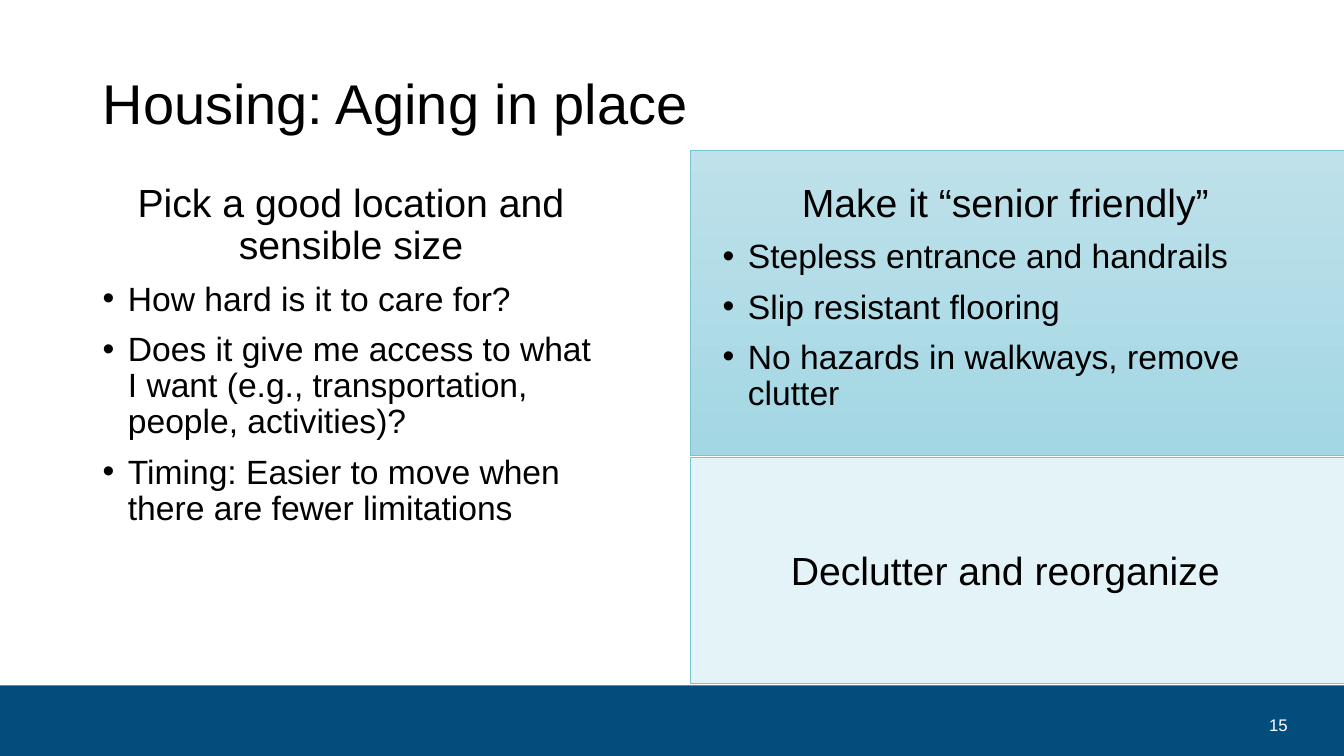
from lxml import etree
from pptx import Presentation
from pptx.dml.color import RGBColor
from pptx.enum import shapes, text
from pptx.oxml import ns
from pptx.util import Inches, Pt

BLACK = RGBColor(0x00, 0x00, 0x00)
WHITE = RGBColor(0xFF, 0xFF, 0xFF)
NAVY = RGBColor(0x02, 0x4D, 0x7C)
TEAL_LINE = RGBColor(0x77, 0xC4, 0xD5)
TEAL_PALE = RGBColor(0xE4, 0xF3, 0xF7)
TEAL_TOP = RGBColor(0xBE, 0xE1, 0xEA)
TEAL_BOTTOM = RGBColor(0xA3, 0xD7, 0xE4)

MIDDLE = text.MSO_ANCHOR.MIDDLE
CENTER = text.PP_ALIGN.CENTER
RIGHT = text.PP_ALIGN.RIGHT


class SlideBuilder:
    font = "Arial"
    heading_size = 28
    bullet_size = 24
    line_spacing = 0.9

    def __init__(self, slide):
        self.s = slide

    def panel(self, left, top, width, height, *colors, line=None):
        sp = self.s.shapes.add_shape(
            shapes.MSO_SHAPE.RECTANGLE,
            Inches(left), Inches(top), Inches(width), Inches(height))
        sp.shadow.inherit = False
        if len(colors) == 1:
            sp.fill.solid()
            sp.fill.fore_color.rgb = colors[0]
        else:
            sp.fill.gradient()
            sp.fill.gradient_angle = 270
            for stop, color in zip(sp.fill.gradient_stops, colors):
                stop.color.rgb = color
        if line is None:
            sp.line.fill.background()
        else:
            sp.line.color.rgb = line
            sp.line.width = Pt(0.5)

    def textbox(self, left, top, width, height, anchor=text.MSO_ANCHOR.TOP):
        sp = self.s.shapes.add_textbox(
            Inches(left), Inches(top), Inches(width), Inches(height))
        tf = sp.text_frame
        tf.word_wrap = True
        tf.vertical_anchor = anchor
        return tf

    def style(self, p, size, color=BLACK, align=None):
        p.line_spacing = self.line_spacing
        p.alignment = align
        for r in p.runs:
            r.font.name = self.font
            r.font.size = Pt(size)
            r.font.color.rgb = color

    def label(self, box, words, size, color=BLACK, align=None):
        tf = self.textbox(*box, anchor=MIDDLE)
        tf.text = words
        self.style(tf.paragraphs[0], size, color, align)

    def bullets(self, box, heading, items):
        tf = self.textbox(*box)
        tf.text = heading
        self.style(tf.paragraphs[0], self.heading_size, align=CENTER)
        for item in items:
            p = tf.add_paragraph()
            p.text = item
            p.space_before = Pt(10)
            self.style(p, self.bullet_size)
            pPr = p._p.get_or_add_pPr()
            pPr.set("marL", str(Inches(0.25)))
            pPr.set("indent", str(-Inches(0.25)))
            font = etree.SubElement(pPr, ns.qn("a:buFont"))
            font.set("typeface", self.font)
            mark = etree.SubElement(pPr, ns.qn("a:buChar"))
            mark.set("char", "•")


def main():
    prs = Presentation()
    prs.slide_width = Inches(13.33)
    prs.slide_height = Inches(7.5)
    b = SlideBuilder(prs.slides.add_slide(prs.slide_layouts[6]))

    b.panel(0, 6.8, 13.33, 0.7, NAVY)
    b.panel(6.85, 4.54, 6.49, 2.24, TEAL_PALE, line=TEAL_LINE)
    b.panel(6.85, 1.49, 6.49, 3.03, TEAL_TOP, TEAL_BOTTOM, line=TEAL_LINE)

    b.label((0.92, 0.36, 11.5, 1.4), "Housing: Aging in place", 40)
    b.bullets((0.92, 1.77, 5.12, 3.19),
              "Pick a good location and sensible size",
              ["How hard is it to care for?",
               "Does it give me access to what I want "
               "(e.g., transportation, people, activities)?",
               "Timing: Easier to move when there are fewer limitations"])
    b.bullets((7.07, 1.77, 5.8, 2.42),
              "Make it “senior friendly”",
              ["Stepless entrance and handrails",
               "Slip resistant flooring",
               "No hazards in walkways, remove clutter"])
    b.label((7.07, 5.2, 5.8, 0.97), "Declutter and reorganize",
            b.heading_size, align=CENTER)
    b.label((11.97, 7, 0.9, 0.4), "15", 12, WHITE, RIGHT)

    prs.save("out.pptx")


if __name__ == "__main__":
    main()
